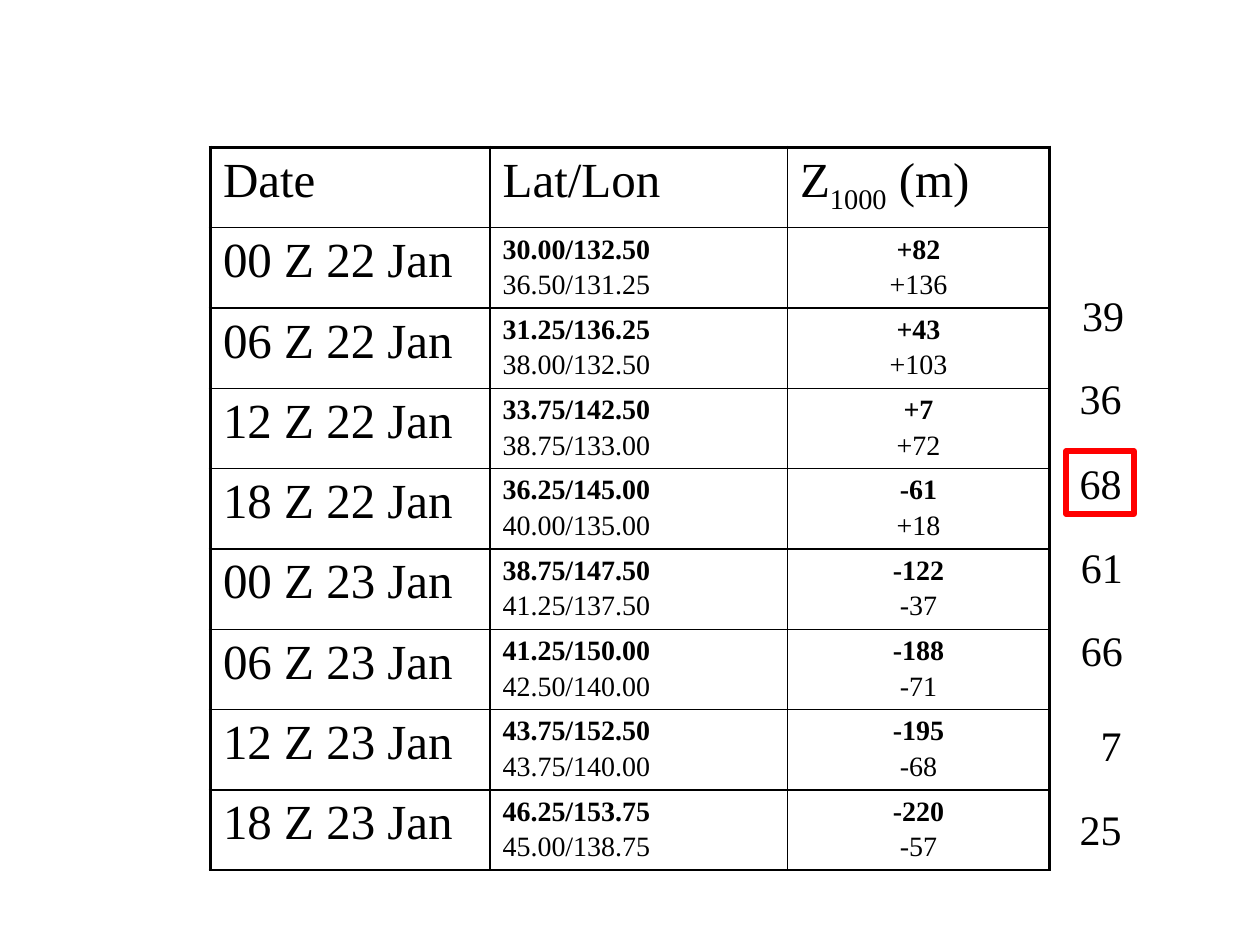
from lxml.etree import SubElement
from pptx import Presentation
from pptx.dml.color import RGBColor
from pptx.enum.shapes import MSO_SHAPE
from pptx.enum.text import MSO_ANCHOR, PP_ALIGN
from pptx.oxml.ns import qn
from pptx.util import Inches, Pt

COLORS = {"text": "000000", "highlight": "FF0000", "paper": "FFFFFF"}
FONT = "Times New Roman"
HEADINGS = ["Date", "Lat/Lon", "Z1000 (m)"]
TRACK = [
    ("00 Z 22 Jan", "30.00/132.50\n36.50/131.25", "+82\n+136"),
    ("06 Z 22 Jan", "31.25/136.25\n38.00/132.50", "+43\n+103"),
    ("12 Z 22 Jan", "33.75/142.50\n38.75/133.00", "+7\n+72"),
    ("18 Z 22 Jan", "36.25/145.00\n40.00/135.00", "-61\n+18"),
    ("00 Z 23 Jan", "38.75/147.50\n41.25/137.50", "-122\n-37"),
    ("06 Z 23 Jan", "41.25/150.00\n42.50/140.00", "-188\n-71"),
    ("12 Z 23 Jan", "43.75/152.50\n43.75/140.00", "-195\n-68"),
    ("18 Z 23 Jan", "46.25/153.75\n45.00/138.75", "-220\n-57"),
]
# Height change, left, top, outline
CHANGES = [
    ("39", 8.48, 2.25, None),
    ("36", 8.46, 2.91, None),
    ("68", 8.46, 3.58, "highlight"),
    ("61", 8.47, 4.25, "paper"),
    ("66", 8.47, 4.91, None),
    ("7", 8.46, 5.66, None),
    ("25", 8.46, 6.33, None),
]


def style(font, size, bold=False):
    font.name = FONT
    font.size = Pt(size)
    font.bold = bold
    font.color.rgb = RGBColor.from_string(COLORS["text"])


def set_borders(cell, widths):
    """Draw the left, right, top and bottom borders, ahead of the cell fill."""
    properties = cell._tc.get_or_add_tcPr()
    for position, (side, width) in enumerate(zip("LRTB", widths)):
        border = SubElement(properties, qn(f"a:ln{side}"), w=str(Pt(width)))
        fill = SubElement(border, qn("a:solidFill"))
        SubElement(fill, qn("a:srgbClr"), val=COLORS["text"])
        properties.insert(position, border)


prs = Presentation()
prs.slide_width, prs.slide_height = Inches(10), Inches(7.5)
slide = prs.slides.add_slide(prs.slide_layouts[6])

table = slide.shapes.add_table(
    len(TRACK) + 1, len(HEADINGS), Inches(1.67), Inches(1.17), Inches(6.66), Inches(5.74)
).table
table.first_row = table.horz_banding = False
for column, width in zip(table.columns, (2.22, 2.36, 2.08)):
    column.width = Inches(width)

for row, values in enumerate([HEADINGS, *TRACK]):
    for col, value in enumerate(values):
        cell = table.cell(row, col)
        cell.margin_bottom = Inches(0.04)
        cell.fill.background()
        set_borders(cell, (
            2.25 if col == 0 else 1,
            2.25 if col == len(HEADINGS) - 1 else 1,
            2.25 if row == 0 else 1,
            1,
        ))
        cell.text_frame.text = value
        large = row == 0 or col == 0
        for line, paragraph in enumerate(cell.text_frame.paragraphs):
            style(paragraph.runs[0].font, 28 if large else 16, not large and line == 0)
            if line:
                paragraph.space_before = Pt(2.5)
            if row and col == 2:
                paragraph.alignment = PP_ALIGN.CENTER

height_heading = table.cell(0, 2).text_frame.paragraphs[0]
height_heading.runs[0].text = "Z"
for part in ("1000", " (m)"):
    run = height_heading.add_run()
    run.text = part
    style(run.font, 28)
height_heading.runs[1].font._element.set("baseline", "-25000")

for change, left, top, outline in CHANGES:
    place = Inches(left), Inches(top), Inches(0.54), Inches(0.5)
    if outline:
        box = slide.shapes.add_shape(MSO_SHAPE.RECTANGLE, *place)
        box.shadow.inherit = False
        box.fill.background()
        box.line.color.rgb = RGBColor.from_string(COLORS[outline])
        box.line.width = Pt(3)
    else:
        box = slide.shapes.add_textbox(*place)
    frame = box.text_frame
    frame.word_wrap = False
    frame.vertical_anchor = MSO_ANCHOR.TOP
    frame.text = change
    frame.paragraphs[0].alignment = PP_ALIGN.RIGHT
    style(frame.paragraphs[0].runs[0].font, 24)

prs.save("out.pptx")
